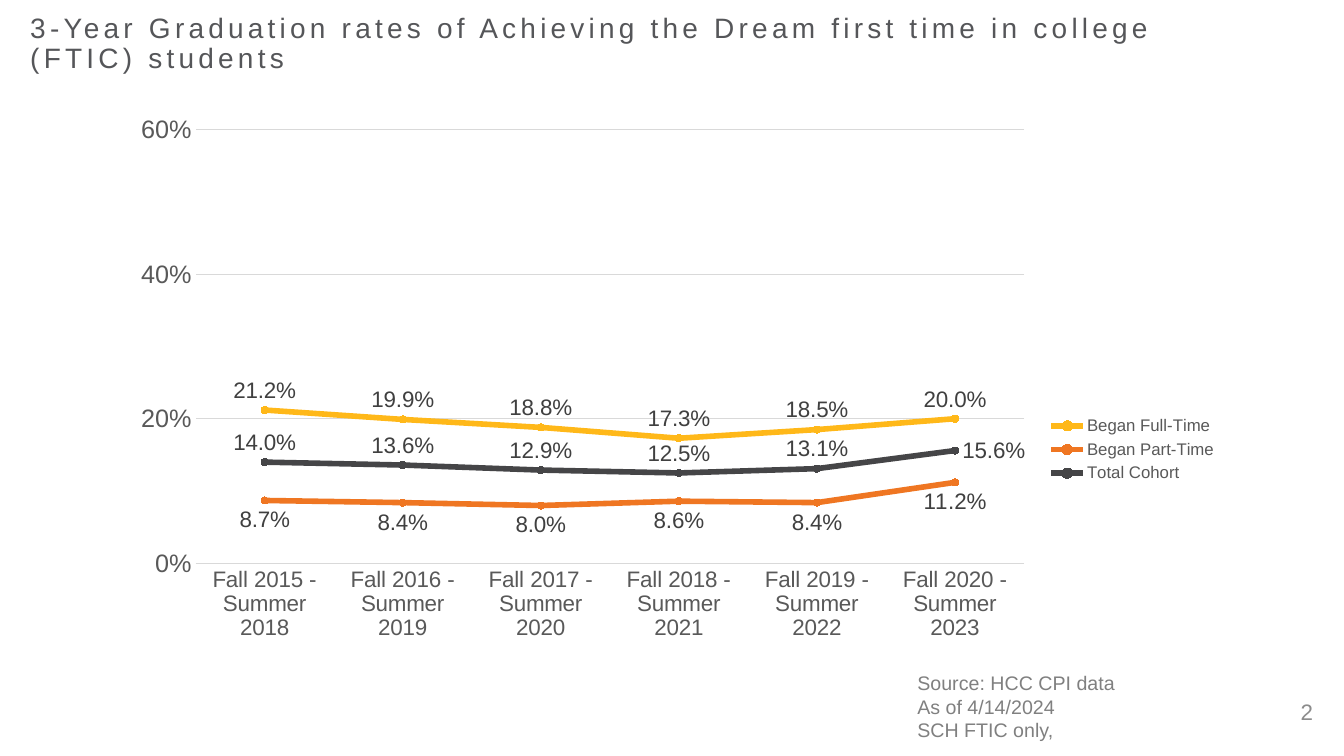
"""Build the slide on three-year graduation rates of FTIC students."""
from dataclasses import dataclass

from lxml import etree
from pptx import Presentation
from pptx.chart.data import CategoryChartData
from pptx.dml.color import RGBColor
from pptx.enum.chart import XL_CHART_TYPE as ChartType
from pptx.enum.chart import XL_LABEL_POSITION as LabelPosition
from pptx.enum.chart import XL_LEGEND_POSITION as LegendPosition
from pptx.enum.chart import XL_MARKER_STYLE as MarkerStyle
from pptx.enum.chart import XL_TICK_MARK as TickMark
from pptx.enum.text import MSO_ANCHOR as Anchor
from pptx.enum.text import MSO_AUTO_SIZE as AutoSize
from pptx.enum.text import PP_ALIGN as Align
from pptx.oxml.ns import qn
from pptx.util import Inches, Pt


@dataclass(frozen=True)
class Theme:
    """Fonts, colours and type sizes of the slide."""
    font: str = "Arial"
    title: str = "555659"
    axis: str = "595959"
    grid: str = "D9D9D9"
    label: str = "404040"
    source: str = "808080"
    number: str = "8C8C8C"
    full_time: str = "FFB819"
    part_time: str = "EF7622"
    total: str = "454547"
    title_size: int = 20
    value_size: int = 18
    label_size: int = 16
    source_size: int = 14
    legend_size: int = 12


THEME = Theme()
TITLE = ("3-Year Graduation rates of Achieving the Dream "
         "first time in college (FTIC) students")
SOURCE_LINES = ["Source: HCC CPI data", "As of 4/14/2024", "SCH FTIC only,"]
COHORTS = [f"Fall {year} - Summer {year + 3}" for year in range(2015, 2021)]
RATES = [
    ("Began Full-Time", (0.212, 0.199, 0.188, 0.173, 0.185, 0.2),
     THEME.full_time, LabelPosition.ABOVE),
    ("Began Part-Time", (0.087, 0.084, 0.08, 0.086, 0.084, 0.112),
     THEME.part_time, LabelPosition.BELOW),
    ("Total Cohort", (0.14, 0.136, 0.129, 0.125, 0.131, 0.156),
     THEME.total, LabelPosition.ABOVE),
]


def style_font(font, size, color):
    """Set the typeface, size and colour of a font."""
    font.name = THEME.font
    font.size = Pt(size)
    font.bold = False
    font.color.rgb = RGBColor.from_string(color)


def style_line(line, color, width):
    """Give a line a solid colour and a width in points."""
    line.color.rgb = RGBColor.from_string(color)
    line.width = Pt(width)


def add_run(paragraph, text, size, color):
    """Add a styled run to a paragraph."""
    run = paragraph.add_run()
    run.text = text
    style_font(run.font, size, color)
    return run


def add_title(slide, text):
    """Place and format the title placeholder with wide letter spacing."""
    title = slide.shapes.title
    title.left, title.top = Inches(0.2), Inches(0)
    title.width, title.height = Inches(11.39), Inches(0.88)
    frame = title.text_frame
    frame.word_wrap = True
    frame.auto_size = AutoSize.NONE
    frame.vertical_anchor = Anchor.MIDDLE
    paragraph = frame.paragraphs[0]
    paragraph.alignment = Align.LEFT
    paragraph.line_spacing = 0.9
    run = add_run(paragraph, text, THEME.title_size, THEME.title)
    run.font._element.set("spc", "300")


def add_text(slide, box, lines, size, color, align=Align.LEFT, anchor=Anchor.TOP):
    """Add a text box with one paragraph per line."""
    frame = slide.shapes.add_textbox(*map(Inches, box)).text_frame
    frame.word_wrap = True
    frame.vertical_anchor = anchor
    for index, line in enumerate(lines):
        paragraph = frame.add_paragraph() if index else frame.paragraphs[0]
        paragraph.alignment = align
        add_run(paragraph, line, size, color)


def set_layout(parent, index, inner, **fractions):
    """Fix the place of a chart part as fractions of the chart area."""
    for old in parent.findall(qn("c:layout")):
        parent.remove(old)
    layout = etree.Element(qn("c:layout"))
    manual = etree.SubElement(layout, qn("c:manualLayout"))
    settings = {"xMode": "edge", "yMode": "edge", **fractions}
    if inner:
        settings = {"layoutTarget": "inner", **settings}
    for name, value in settings.items():
        etree.SubElement(manual, qn(f"c:{name}")).set("val", str(value))
    parent.insert(index, layout)


def style_axes(chart):
    """Format the cohort axis and the percentage axis."""
    cohort_axis, rate_axis = chart.category_axis, chart.value_axis
    for axis, size in ((cohort_axis, THEME.label_size), (rate_axis, THEME.value_size)):
        axis.major_tick_mark = TickMark.NONE
        axis.minor_tick_mark = TickMark.NONE
        style_font(axis.tick_labels.font, size, THEME.axis)
    style_line(cohort_axis.format.line, THEME.grid, 0.75)
    rate_axis.minimum_scale = 0
    rate_axis.maximum_scale = 0.6
    rate_axis.major_unit = 0.2
    rate_axis.tick_labels.number_format = "0%"
    rate_axis.tick_labels.number_format_is_linked = False
    rate_axis.format.line.fill.background()
    style_line(rate_axis.major_gridlines.format.line, THEME.grid, 0.75)


def style_series(series, color, position):
    """Format the line, markers and value labels of a series."""
    series.smooth = False
    style_line(series.format.line, color, 4)
    series.marker.style = MarkerStyle.CIRCLE
    series.marker.size = 5
    series.marker.format.fill.solid()
    series.marker.format.fill.fore_color.rgb = RGBColor.from_string(color)
    style_line(series.marker.format.line, color, 0.75)
    labels = series.data_labels
    labels.show_value = True
    labels.number_format = "0.0%"
    labels.number_format_is_linked = False
    labels.position = position
    style_font(labels.font, THEME.label_size, THEME.label)


def add_rate_chart(slide):
    """Add the line chart of graduation rates."""
    data = CategoryChartData(number_format="0.0%")
    data.categories = COHORTS
    for name, values, _, _ in RATES:
        data.add_series(name, values)
    box = map(Inches, (1.17, 1.04, 11, 5.43))
    chart = slide.shapes.add_chart(ChartType.LINE_MARKERS, *box, data).chart
    chart.has_title = False
    chart.font.name = THEME.font
    chart.font.size = Pt(10)
    plot = chart.plots[0]
    plot.vary_by_categories = False
    style_axes(chart)
    for series, (_, _, color, position) in zip(plot.series, RATES):
        style_series(series, color, position)
    last_label = plot.series[-1].points[len(COHORTS) - 1].data_label
    style_font(last_label.font, THEME.label_size, THEME.label)
    last_label.position = LabelPosition.RIGHT
    chart.has_legend = True
    legend = chart.legend
    legend.position = LegendPosition.RIGHT
    legend.include_in_layout = False
    style_font(legend.font, THEME.legend_size, THEME.axis)
    plot_area = chart._chartSpace.chart.plotArea
    set_layout(plot_area, 0, True, x=0.07, y=0.045, w=0.747, h=0.793)
    set_layout(legend._element, 1, False, x=0.835, y=0.56, w=0.16, h=0.14)


def main():
    """Build and save the presentation."""
    presentation = Presentation()
    presentation.slide_width = Inches(13.33)
    presentation.slide_height = Inches(7.5)
    slide = presentation.slides.add_slide(presentation.slide_layouts[5])
    add_text(slide, (12.5, 6.79, 0.62, 0.45), ["2"], THEME.label_size,
             THEME.number, Align.RIGHT, Anchor.BOTTOM)
    add_rate_chart(slide)
    add_title(slide, TITLE)
    add_text(slide, (9, 6.61, 5.94, 0.81), SOURCE_LINES, THEME.source_size, THEME.source)
    presentation.save("out.pptx")


if __name__ == "__main__":
    main()
